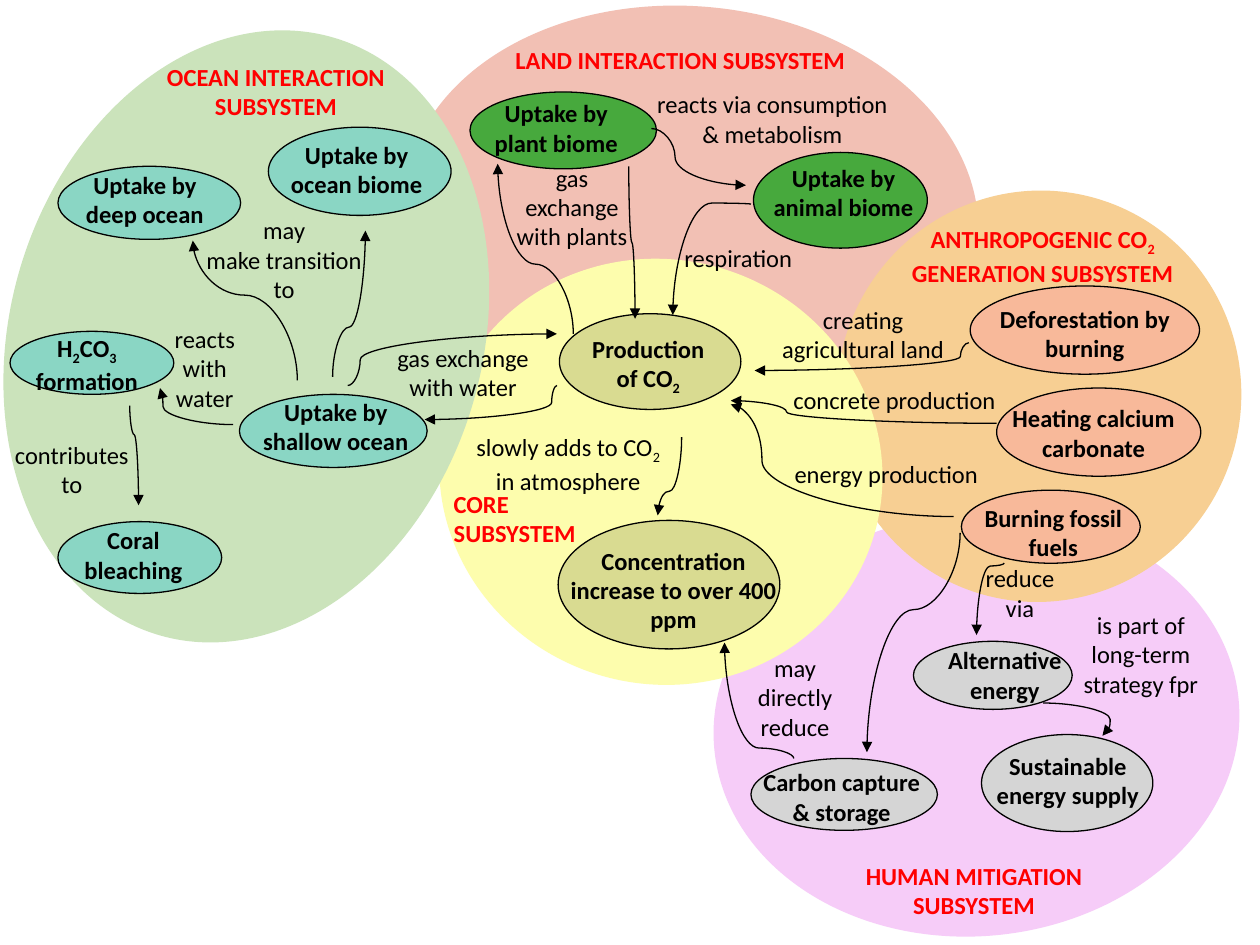
from lxml import etree
from pptx import Presentation
from pptx import util as u
from pptx.dml.color import RGBColor
from pptx.enum import shapes, text
from pptx.oxml.ns import qn

RED, BLACK = "FF0000", "000000"

# Boxes are (left, top, width, height) in inches; text between bars is subscript.
# Subsystem: fill, ellipse, rotation, title, title box
SUBSYSTEMS = [
    ("F6CCF8", (5.66, 4.07, 4.18, 3.36), -5.4,
     "HUMAN MITIGATION SUBSYSTEM", (6.77, 6.83, 1.92, 0.54)),
    ("F2C0B4", (3.2, 0.05, 4.57, 3.36), 5.2,
     "LAND INTERACTION SUBSYSTEM", (4.09, 0.36, 2.88, 0.5)),
    ("F7CF93", (6.64, 1.51, 3.21, 3.27), 16,
     "ANTHROPOGENIC CO|2| GENERATION SUBSYSTEM", (7.23, 1.78, 2.09, 0.47)),
    ("FDFDAD", (3.48, 2.06, 3.53, 3.37), 16,
     "CORE\nSUBSYSTEM", (3.6, 3.88, 0.97, 0.47)),
    ("CBE3BB", (0.08, 0.2, 3.75, 4.94), 16.2,
     "OCEAN INTERACTION SUBSYSTEM", (1.24, 0.49, 1.9, 0.48)),
]

# Nodes by fill: name, ellipse, text box
NODES = {
    "D9DB91": [
        ("Production of CO|2", (4.44, 2.49, 1.44, 0.76), (4.67, 2.65, 0.95, 0.47)),
        ("Concentration increase to over 400 ppm",
         (4.43, 4.13, 1.76, 1.02), (4.45, 4.33, 1.79, 0.71)),
    ],
    "F8B99A": [
        ("Heating calcium carbonate", (7.91, 3.08, 1.62, 0.7), (7.96, 3.2, 1.44, 0.47)),
        ("Deforestation by burning", (7.7, 2.27, 1.82, 0.7), (7.83, 2.41, 1.56, 0.47)),
        ("Burning fossil fuels", (7.63, 3.89, 1.42, 0.58), (7.63, 3.99, 1.46, 0.47)),
    ],
    "8AD6C4": [
        ("Coral bleaching", (0.46, 4.14, 1.3, 0.57), (0.51, 4.17, 1.1, 0.47)),
        ("H|2|CO|3| formation", (0.08, 2.63, 1.3, 0.5), (0.25, 2.64, 0.88, 0.47)),
        ("Uptake by deep ocean", (0.46, 1.32, 1.45, 0.58), (0.61, 1.35, 1.08, 0.47)),
        ("Uptake by ocean biome", (2.13, 1.01, 1.45, 0.7), (2.29, 1.11, 1.08, 0.47)),
        ("Uptake by shallow ocean", (1.9, 3.13, 1.49, 0.58), (2.07, 3.15, 1.19, 0.47)),
    ],
    "47A93D": [
        ("Uptake by animal biome", (5.98, 1.21, 1.38, 0.76), (6.09, 1.29, 1.21, 0.47)),
        ("Uptake by plant biome", (3.73, 0.73, 1.48, 0.61), (3.8, 0.78, 1.23, 0.47)),
    ],
    "D5D5D5": [
        ("Alternative energy", (7.25, 5.09, 1.26, 0.54), (7.32, 5.12, 1.31, 0.47)),
        ("Sustainable energy supply", (7.79, 5.83, 1.36, 0.77), (7.9, 5.96, 1.15, 0.47)),
        ("Carbon capture & storage", (5.96, 6.02, 1.48, 0.57), (5.99, 6.09, 1.38, 0.47)),
    ],
}

# Arrows: start, end, position of the bend as a share of the way
ACROSS = [
    ((7.91, 3.36), (5.8, 3.18), 0.79),
    ((7.69, 2.72), (5.99, 2.94), 0.04),
    ((7.57, 4.1), (5.8, 3.21), 0.86),
    ((1.85, 3.37), (1.27, 3.08), 0.96),
    ((4.42, 3.06), (3.37, 3.33), 0.04),
    ((2.76, 3.06), (4.42, 2.65), 0.06),
    ((5.17, 1.02), (5.92, 1.47), 0.25),
    ((8.28, 5.58), (8.75, 5.84), 1.13),
]
UP_OR_DOWN = [
    ((5.41, 3.47), (5.22, 4.09), 0.69),
    ((1.03, 3.22), (1.1, 4.01), 0.29),
    ((2.36, 3.02), (1.53, 1.91), 0.61),
    ((2.64, 2.99), (2.9, 1.83), 0.34),
    ((5.96, 1.62), (5.34, 2.5), -0.01),
    ((4.55, 2.65), (3.95, 1.3), 0.41),
    ((4.99, 1.32), (5.04, 2.53), 0.5),
    ((7.97, 4.47), (7.75, 5.04), 0.04),
    ((6.3, 6.02), (5.75, 5.1), 0.09),
    ((7.62, 4.23), (6.88, 5.97), 0.35),
]

LABELS = [
    ("slowly adds to CO|2| in atmosphere", (3.76, 3.43, 1.5, 0.47)),
    ("concrete production", (6.23, 3.06, 1.74, 0.24)),
    ("creating agricultural land", (6.07, 2.42, 1.56, 0.47)),
    ("energy production", (6.17, 3.64, 1.73, 0.24)),
    ("contributes to", (0.05, 3.49, 1.04, 0.47)),
    ("reacts with water", (1.23, 2.57, 0.79, 0.71)),
    ("may\nmake transition to", (1.6, 1.71, 1.31, 0.71)),
    ("gas exchange with water", (3.03, 2.72, 1.29, 0.47)),
    ("reacts via consumption & metabolism", (5.17, 0.71, 1.92, 0.47)),
    ("respiration", (5.36, 1.93, 1, 0.24)),
    ("gas exchange with plants", (4.09, 1.29, 0.9, 0.71)),
    ("reduce via", (7.7, 4.47, 0.79, 0.47)),
    ("is part of long-term strategy fpr", (8.5, 4.84, 1.11, 0.71)),
    ("may directly reduce", (5.92, 5.18, 0.78, 0.71)),
]
LEFT_ALIGNED = {"CORE", "LAND INTERACTION SUBSYSTEM"}


def rgb(color):
    return RGBColor.from_string(color)


def inches(values):
    return [u.Inches(v) for v in values]


def add_ellipse(slide, box, fill, outline=None, rotation=0):
    sp = slide.shapes.add_shape(shapes.MSO_SHAPE.OVAL, *inches(box))
    sp.shadow.inherit = False
    sp.rotation = rotation
    sp.fill.solid()
    sp.fill.fore_color.rgb = rgb(fill)
    if outline:
        sp.line.color.rgb = rgb(outline)
        sp.line.width = u.Pt(0.75)
    else:
        sp.line.fill.background()


def add_text(slide, content, box, color=BLACK, bold=False):
    tf = slide.shapes.add_textbox(*inches(box)).text_frame
    tf.word_wrap = True
    tf.auto_size = text.MSO_AUTO_SIZE.SHAPE_TO_FIT_TEXT
    tf.margin_left = tf.margin_top = tf.margin_right = tf.margin_bottom = 0
    for i, line in enumerate(content.split("\n")):
        p = tf.add_paragraph() if i else tf.paragraphs[0]
        p.alignment = text.PP_ALIGN.LEFT if line in LEFT_ALIGNED else text.PP_ALIGN.CENTER
        for j, part in enumerate(line.split("|")):
            r = p.add_run()
            r.text = part
            r.font.name, r.font.size, r.font.bold = "Calibri", u.Pt(14), bold
            r.font.color.rgb = rgb(color)
            if j % 2:
                r.font._element.set("baseline", "-25000")


def add_arrow(slide, start, end, bend, vertical=False):
    """Curved arrow; a vertical one is laid out flat, then turned a quarter."""
    (x1, y1), (x2, y2) = start, end
    down = y2 > y1
    if vertical:
        cx, cy = (x1 + x2) / 2, (y1 + y2) / 2
        half_len = abs(y2 - y1) / 2
        half_rise = (x1 - x2 if down else x2 - x1) / 2
        x1, x2 = cx - half_len, cx + half_len
        y1, y2 = cy - half_rise, cy + half_rise
    c = slide.shapes.add_connector(shapes.MSO_CONNECTOR.CURVE, *inches((x1, y1, x2, y2)))
    c.line.color.rgb = rgb(BLACK)
    c.line.width = u.Pt(0.75)
    props = c._element.spPr
    if vertical:
        props.find(qn("a:xfrm")).set("rot", str((90 if down else 270) * 60000))
    guides = props.find(qn("a:prstGeom")).find(qn("a:avLst"))
    etree.SubElement(guides, qn("a:gd"), name="adj1", fmla=f"val {round(bend * 100000)}")
    etree.SubElement(props.find(qn("a:ln")), qn("a:tailEnd"), type="triangle")
    etree.SubElement(props, qn("a:effectLst"))


def main():
    prs = Presentation()
    prs.slide_width, prs.slide_height = inches((10, 7.5))
    slide = prs.slides.add_slide(prs.slide_layouts[6])
    for fill, ellipse, rotation, _, _ in SUBSYSTEMS:
        add_ellipse(slide, ellipse, fill, rotation=rotation)
    for _, _, _, title, box in SUBSYSTEMS:
        add_text(slide, title, box, RED, bold=True)
    for fill, nodes in NODES.items():
        for name, ellipse, box in nodes:
            add_ellipse(slide, ellipse, fill, BLACK)
            add_text(slide, name, box, bold=True)
    for arrow in ACROSS:
        add_arrow(slide, *arrow)
    for arrow in UP_OR_DOWN:
        add_arrow(slide, *arrow, vertical=True)
    for label, box in LABELS:
        add_text(slide, label, box)
    prs.save("out.pptx")


if __name__ == "__main__":
    main()
